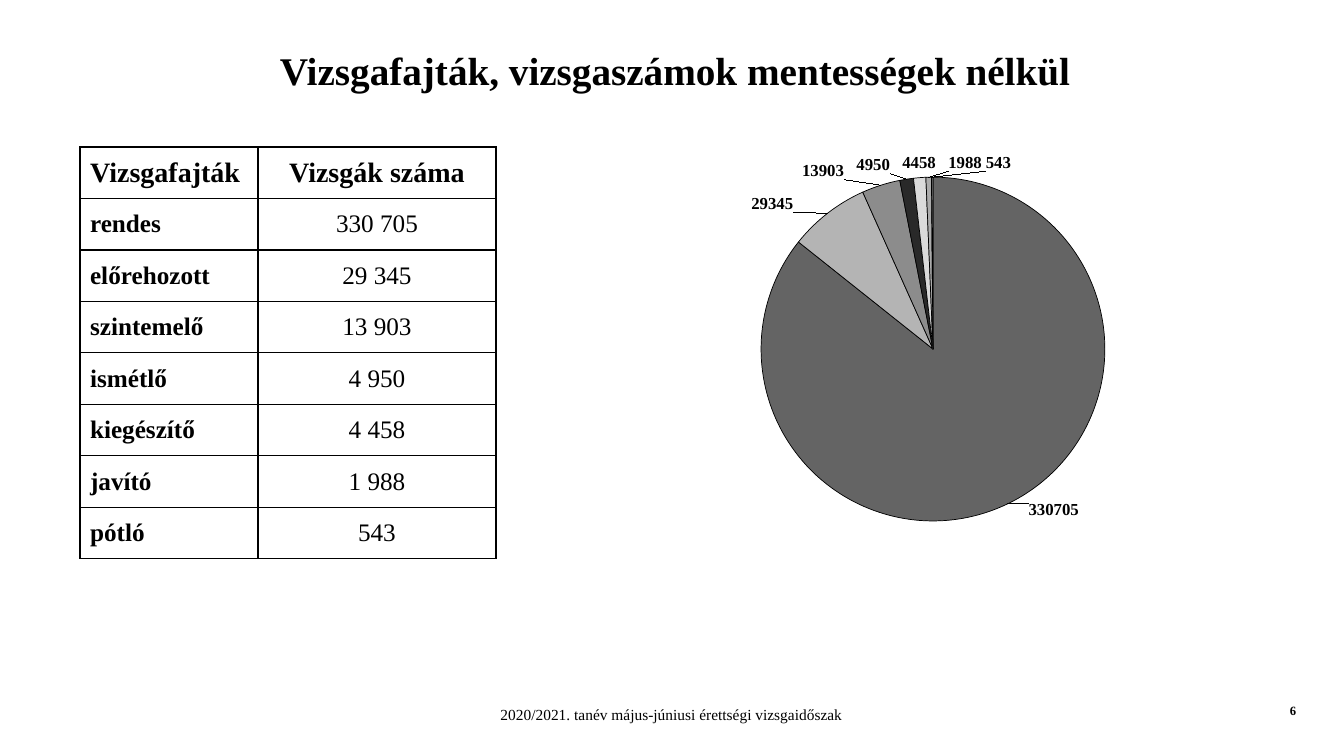
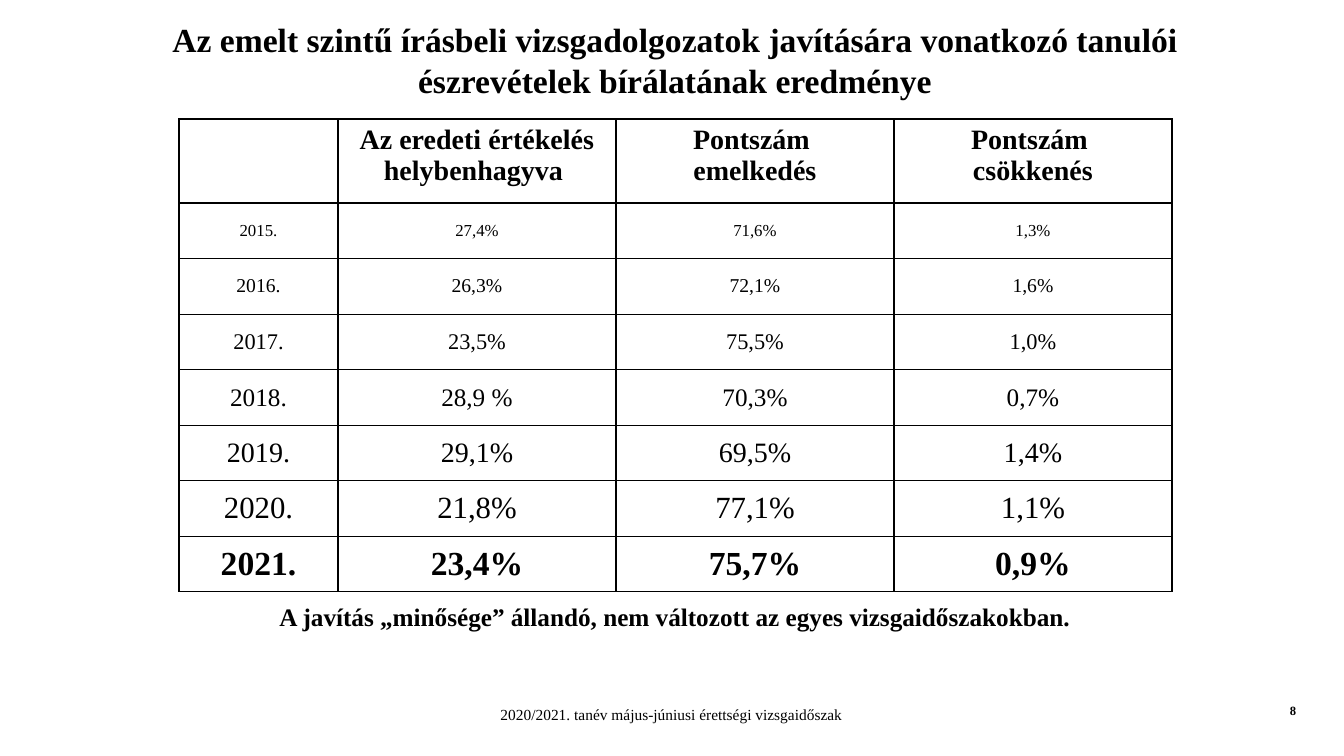
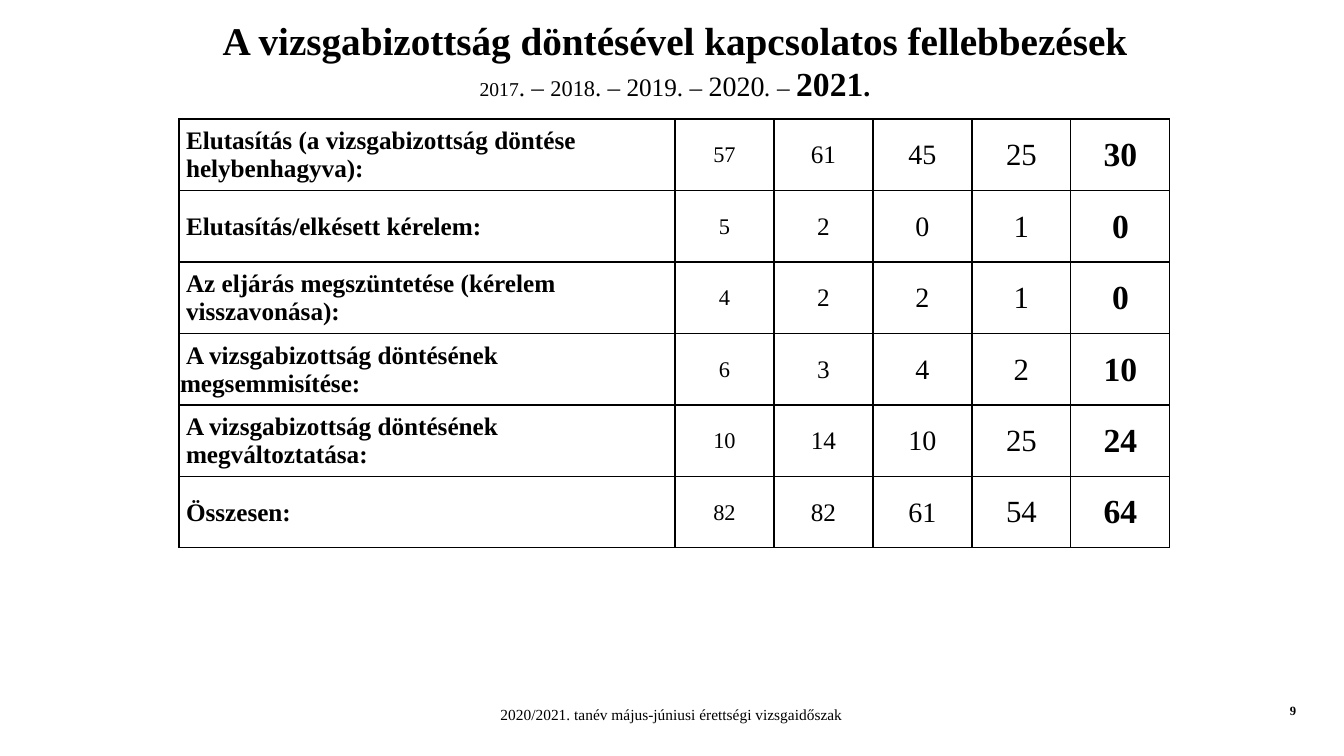
from pptx import Presentation
from pptx.chart.data import CategoryChartData
from pptx.dml.color import RGBColor
from pptx.enum.chart import XL_CHART_TYPE as ChartType, XL_LABEL_POSITION as LabelPosition
from pptx.enum.text import MSO_ANCHOR as Anchor, MSO_AUTO_SIZE as AutoSize, PP_ALIGN as Align
from pptx.oxml import parse_xml
from pptx.oxml.ns import nsdecls
from pptx.util import Emu, Pt

COLORS = {
    "text": "000000",
    "line": "000000",
    "slices": ["646464", "B4B4B4", "8C8C8C", "292929", "DADADA", "ABABAB", "7F7F7F"],
}
FONT = "Times New Roman"
FOOTER = "2020/2021. tanév május-júniusi érettségi vizsgaidőszak"
EMU_PER_PX = 914400 / 100.8
TITLE_ONLY = 5


def px(length):
    return Emu(round(length * EMU_PER_PX))


def rgb(color):
    return RGBColor.from_string(color)


def chart_layout(**values):
    """Manual layout element, in fractions of the chart's size."""
    tags = "".join(f'<c:{name} val="{value}"/>' for name, value in values.items())
    return parse_xml(f'<c:layout {nsdecls("c")}><c:manualLayout>{tags}</c:manualLayout></c:layout>')


class Deck:
    def __init__(self):
        self.presentation = Presentation()
        self.presentation.slide_width = px(1344)
        self.presentation.slide_height = px(756)
        self.slide = None

    def style(self, font, size, bold=False, italic=False):
        font.name = FONT
        font.size = Pt(size)
        font.bold = bold
        font.italic = italic
        font.color.rgb = rgb(COLORS["text"])

    def style_text(self, text_frame, size, bold=False, align=Align.LEFT):
        for paragraph in text_frame.paragraphs:
            paragraph.alignment = align
            for run in paragraph.runs:
                self.style(run.font, size, bold)

    def new_slide(self, number, title_lines, title_height=79):
        """Add a slide; each title line is a list of (text, size, bold, italic) parts."""
        layout = self.presentation.slide_layouts[TITLE_ONLY]
        self.slide = self.presentation.slides.add_slide(layout)
        self.title(title_lines, title_height)
        self.text(FOOTER, 362, 700, 619, 29, 11, align=Align.CENTER)
        self.text(str(number), 1280, 698, 33, 25, 9, bold=True, wrap=False)

    def title(self, lines, height):
        title = self.slide.shapes.title
        title.left, title.top, title.width, title.height = map(px, (80, 20, 1190, height))
        text_frame = title.text_frame
        text_frame.auto_size = AutoSize.NONE
        text_frame.vertical_anchor = Anchor.MIDDLE
        for index, parts in enumerate(lines):
            paragraph = text_frame.add_paragraph() if index else text_frame.paragraphs[0]
            paragraph.alignment = Align.CENTER
            for text, *look in parts:
                run = paragraph.add_run()
                run.text = text
                self.style(run.font, *look)

    def text(self, text, left, top, width, height, size, bold=False,
             align=Align.LEFT, wrap=True, line_spacing=1.0):
        box = self.slide.shapes.add_textbox(px(left), px(top), px(width), px(height))
        text_frame = box.text_frame
        text_frame.word_wrap = wrap
        text_frame.text = text
        text_frame.paragraphs[0].line_spacing = line_spacing
        self.style_text(text_frame, size, bold, align)

    def table(self, rows, left, top, columns, height, look, header_height=None, margins=None):
        """look(row, column) gives the size, boldness, alignment and anchor of a cell."""
        frame = self.slide.shapes.add_table(
            len(rows), len(columns), px(left), px(top), px(sum(columns)), px(height))
        table = frame.table
        table.first_row = table.horz_banding = False
        for column, width in zip(table.columns, columns):
            column.width = px(width)
        header_height = header_height or height / len(rows)
        body_height = (height - header_height) / (len(rows) - 1)
        for row_index, texts in enumerate(rows):
            table.rows[row_index].height = px(body_height if row_index else header_height)
            for column_index, text in enumerate(texts):
                cell = table.cell(row_index, column_index)
                size, bold, align, anchor = look(row_index, column_index)
                cell.text_frame.text = text
                cell.vertical_anchor = anchor
                if margins:
                    (cell.margin_left, cell.margin_top,
                     cell.margin_right, cell.margin_bottom) = map(px, margins)
                self.style_text(cell.text_frame, size, bold, align)
                self.border(cell)
                cell.fill.background()
        return table

    def border(self, cell):
        properties = cell._tc.get_or_add_tcPr()
        for side in ("lnL", "lnR", "lnT", "lnB"):
            properties.append(parse_xml(
                f'<a:{side} {nsdecls("a")} w="{Pt(1)}"><a:solidFill>'
                f'<a:srgbClr val="{COLORS["line"]}"/></a:solidFill></a:{side}>'))

    def pie(self, values, left, top, width, height, plot_area, label_shifts):
        """label_shifts maps a slice to the (x, y) shift of its outside label."""
        data = CategoryChartData(number_format="0")
        data.categories = [str(index + 1) for index in range(len(values))]
        data.add_series("Series 1", values)
        chart = self.slide.shapes.add_chart(
            ChartType.PIE, px(left), px(top), px(width), px(height), data).chart
        chart.has_title = chart.has_legend = False
        self.style(chart.font, 10)
        area = chart._chartSpace.xpath("c:chart/c:plotArea")[0]
        for layout in area.xpath("c:layout"):
            area.remove(layout)
        x, y, w, h = plot_area
        area.insert(0, chart_layout(layoutTarget="inner", xMode="edge", yMode="edge",
                                    x=x, y=y, w=w, h=h))
        series = chart.plots[0].series[0]
        for index, color in enumerate(COLORS["slices"]):
            slice_format = series.points[index].format
            slice_format.fill.solid()
            slice_format.fill.fore_color.rgb = rgb(color)
            slice_format.line.color.rgb = rgb(COLORS["line"])
            slice_format.line.width = Pt(0.5)
        labels = series.data_labels
        labels.show_value = True
        labels.position = LabelPosition.BEST_FIT
        self.style(labels.font, 12, bold=True)
        for index, (x, y) in label_shifts.items():
            label = series.points[index].data_label
            self.style(label.font, 12, bold=True)
            label.position = LabelPosition.OUTSIDE_END
            element = series._element.xpath(f"c:dLbls/c:dLbl[c:idx/@val='{index}']")[0]
            element.insert(1, chart_layout(x=x, y=y))


def exam_types(deck):
    deck.new_slide(6, [[("Vizsgafajták, vizsgaszámok mentességek nélkül", 28, True)]], 99)
    counts = {"rendes": 330705, "előrehozott": 29345, "szintemelő": 13903, "ismétlő": 4950,
              "kiegészítő": 4458, "javító": 1988, "pótló": 543}
    rows = [("Vizsgafajták", "Vizsgák száma")]
    rows += [(name, f"{count:,}".replace(",", " ")) for name, count in counts.items()]

    def look(row, column):
        return (18 if row else 20, row == 0 or column == 0,
                Align.CENTER if column else Align.LEFT, Anchor.MIDDLE)

    deck.table(rows, 80, 147, [178, 238], 412, look)
    deck.pie(list(counts.values()), 626, 139, 614, 412,
             plot_area=(0.22, 0.09, 0.56, 0.84),
             label_shifts={0: (0.03, -0.02), 1: (-0.05, 0.01)})


def review_results(deck):
    deck.new_slide(8, [[("Az emelt szintű írásbeli vizsgadolgozatok javítására vonatkozó tanulói "
                         "észrevételek bírálatának eredménye", 24, True)]])
    deck.text("A javítás „minősége” állandó, nem változott az egyes vizsgaidőszakokban.",
              80, 600, 1190, 59, 18, bold=True, align=Align.CENTER, line_spacing=0.9)
    rows = [
        ("", "Az eredeti értékelés helybenhagyva ", "Pontszám \vemelkedés", "Pontszám \vcsökkenés"),
        ("2015.", "27,4%", "71,6%", "1,3%"),
        ("2016.", "26,3%", "72,1%", "1,6%"),
        ("2017.", "23,5%", "75,5%", "1,0%"),
        ("2018.", "28,9 %", "70,3%", "0,7%"),
        ("2019.", "29,1%", "69,5%", "1,4%"),
        ("2020.", "21,8%", "77,1%", "1,1%"),
        ("2021.", "23,4%", "75,7%", "0,9%"),
    ]

    def look(row, column):
        if row == 0:
            return 20, True, Align.CENTER, Anchor.TOP
        return 10 + 2 * row, row == len(rows) - 1, Align.CENTER, Anchor.MIDDLE

    deck.table(rows, 179, 119, [159, 278, 278, 278], 473, look, header_height=84)


def appeals(deck):
    deck.new_slide(9, [
        [("A vizsgabizottság döntésével kapcsolatos fellebbezések", 28, True)],
        [("2017", 14), (". – ", 18), ("2018", 16), (". – 2019. – ", 18), ("2020", 20),
         (". – ", 18, False, True), ("2021", 24, True), (".", 20, True)],
    ])
    rows = [
        ("Elutasítás (a vizsgabizottság döntése\nhelybenhagyva):", "57", "61", "45", "25", "30"),
        ("Elutasítás/elkésett kérelem:", "5", "2", "0", "1", "0"),
        ("Az eljárás megszüntetése (kérelem\nvisszavonása):", "4", "2", "2", "1", "0"),
        ("A vizsgabizottság döntésének megsemmisítése:", "6", "3", "4", "2", "10"),
        ("A vizsgabizottság döntésének\nmegváltoztatása:", "10", "14", "10", "25", "24"),
        ("Összesen:", "82", "82", "61", "54", "64"),
    ]

    def look(row, column):
        if column == 0:
            return 18, True, Align.LEFT, Anchor.MIDDLE
        return 14 + 2 * column, column == 5, Align.CENTER, Anchor.MIDDLE

    table = deck.table(rows, 179, 119, [496] + [99] * 5, 429, look, margins=(1, 1, 1, 0))
    for row in table.rows:
        for paragraph in row.cells[0].text_frame.paragraphs:
            properties = paragraph._p.get_or_add_pPr()
            properties.set("marL", "0")
            properties.set("indent", str(px(6)))


def main():
    deck = Deck()
    exam_types(deck)
    review_results(deck)
    appeals(deck)
    deck.presentation.save("out.pptx")


if __name__ == "__main__":
    main()
